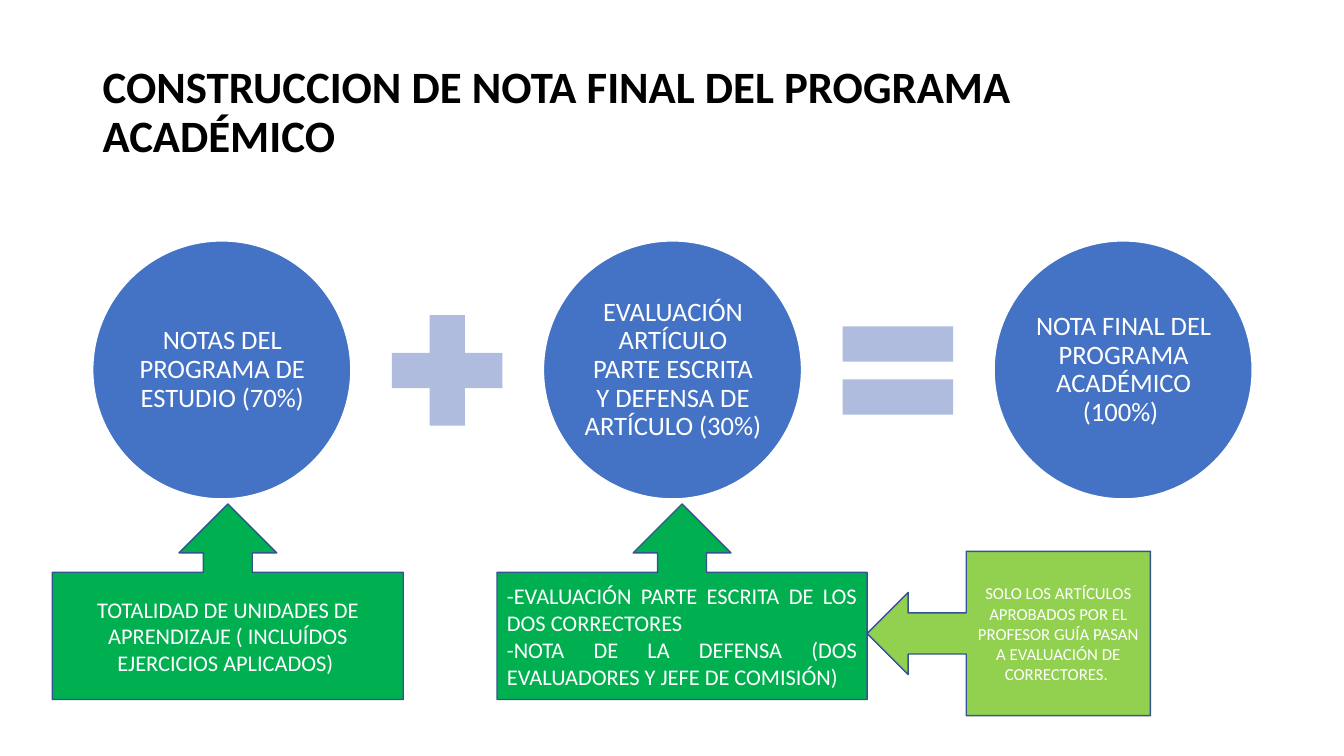
from pptx import Presentation
from pptx.dml.color import RGBColor
from pptx.enum.shapes import MSO_SHAPE
from pptx.enum.text import MSO_ANCHOR, PP_ALIGN
from pptx.util import Emu, Pt

PX = 9144  # 100 px to the inch
CIRCLE, PLUS, EQUAL = MSO_SHAPE.OVAL, MSO_SHAPE.MATH_PLUS, MSO_SHAPE.MATH_EQUAL
UP_CALLOUT, LEFT_CALLOUT = MSO_SHAPE.UP_ARROW_CALLOUT, MSO_SHAPE.LEFT_ARROW_CALLOUT
MIDDLE = MSO_ANCHOR.MIDDLE
LEFT, CENTER, JUSTIFY = PP_ALIGN.LEFT, PP_ALIGN.CENTER, PP_ALIGN.JUSTIFY

THEME = {
    "font": "Calibri",
    "title": "000000", "text": "FFFFFF",
    "circle": "4472C4", "circle_line": "FFFFFF",
    "operator": "B0BCDE",
    "source": "00B050", "condition": "92D050", "callout_line": "325491",
    "title_size": 32, "circle_size": 19, "source_size": 16, "condition_size": 12,
}


def add_box(kind, bounds, fill, line=None):
    box = page.shapes.add_shape(kind, *(Emu(value * PX) for value in bounds))
    box.shadow.inherit = False
    box.fill.solid()
    box.fill.fore_color.rgb = RGBColor.from_string(THEME[fill])
    if line:
        box.line.color.rgb = RGBColor.from_string(THEME[line])
        box.line.width = Pt(1)
    else:
        box.line.fill.background()
    return box


def write(box, lines, size, align, color="text", spacing=1.0, bold=False):
    frame = box.text_frame
    frame.word_wrap = True
    frame.vertical_anchor = MIDDLE
    frame.text = "\n".join(lines)
    for para in frame.paragraphs:
        para.alignment = align
        para.line_spacing = spacing
        para.font.name = THEME["font"]
        para.font.size = Pt(THEME[size])
        para.font.bold = bold
        para.font.color.rgb = RGBColor.from_string(THEME[color])


deck = Presentation()
deck.slide_width, deck.slide_height = Emu(1333 * PX), Emu(750 * PX)
page = deck.slides.add_slide(deck.slide_layouts[6])

title = page.shapes.add_textbox(*(Emu(value * PX) for value in (92, 40, 1150, 145)))
write(title, ["CONSTRUCCION DE NOTA FINAL DEL PROGRAMA ACADÉMICO"],
      "title_size", LEFT, color="title", spacing=0.9, bold=True)

# Equation: circles and operators alternate along one centre line
DIAMETER, OPERATOR, GAP, CENTER_Y = 256, 149, 21, 367
EQUATION = [
    (CIRCLE, "NOTAS DEL PROGRAMA DE ESTUDIO (70%)"),
    (PLUS, None),
    (CIRCLE, "EVALUACIÓN ARTÍCULO PARTE ESCRITA Y DEFENSA DE ARTÍCULO (30%)"),
    (EQUAL, None),
    (CIRCLE, "NOTA FINAL DEL PROGRAMA ACADÉMICO (100%) "),
]
left = 92
for kind, label in EQUATION:
    side = DIAMETER if label else OPERATOR
    bounds = (left, CENTER_Y - side // 2, side, side)
    if label:
        circle = add_box(kind, bounds, "circle", "circle_line")
        write(circle, [label], "circle_size", CENTER, spacing=0.9)
        frame = circle.text_frame
        frame.margin_left = frame.margin_top = frame.margin_bottom = Emu(3 * PX)
        frame.margin_right = Emu(2 * PX)
    else:
        add_box(kind, bounds, "operator")
    left += side + GAP

CALLOUTS = [
    (UP_CALLOUT, (52, 500, 348, 194), "source", CENTER,
     ["TOTALIDAD DE UNIDADES DE APRENDIZAJE ( INCLUÍDOS EJERCICIOS APLICADOS) "]),
    (UP_CALLOUT, (493, 500, 367, 194), "source", JUSTIFY,
     ["-EVALUACIÓN PARTE ESCRITA DE LOS DOS CORRECTORES",
      "-NOTA DE LA DEFENSA (DOS EVALUADORES Y JEFE DE COMISIÓN) "]),
    (LEFT_CALLOUT, (860, 547, 281, 163), "condition", CENTER,
     ["SOLO LOS ARTÍCULOS APROBADOS POR EL PROFESOR GUÍA PASAN A EVALUACIÓN "
      "DE CORRECTORES. "]),
]
for kind, bounds, role, align, lines in CALLOUTS:
    callout = add_box(kind, bounds, role, "callout_line")
    write(callout, lines, role + "_size", align)

deck.save("out.pptx")
